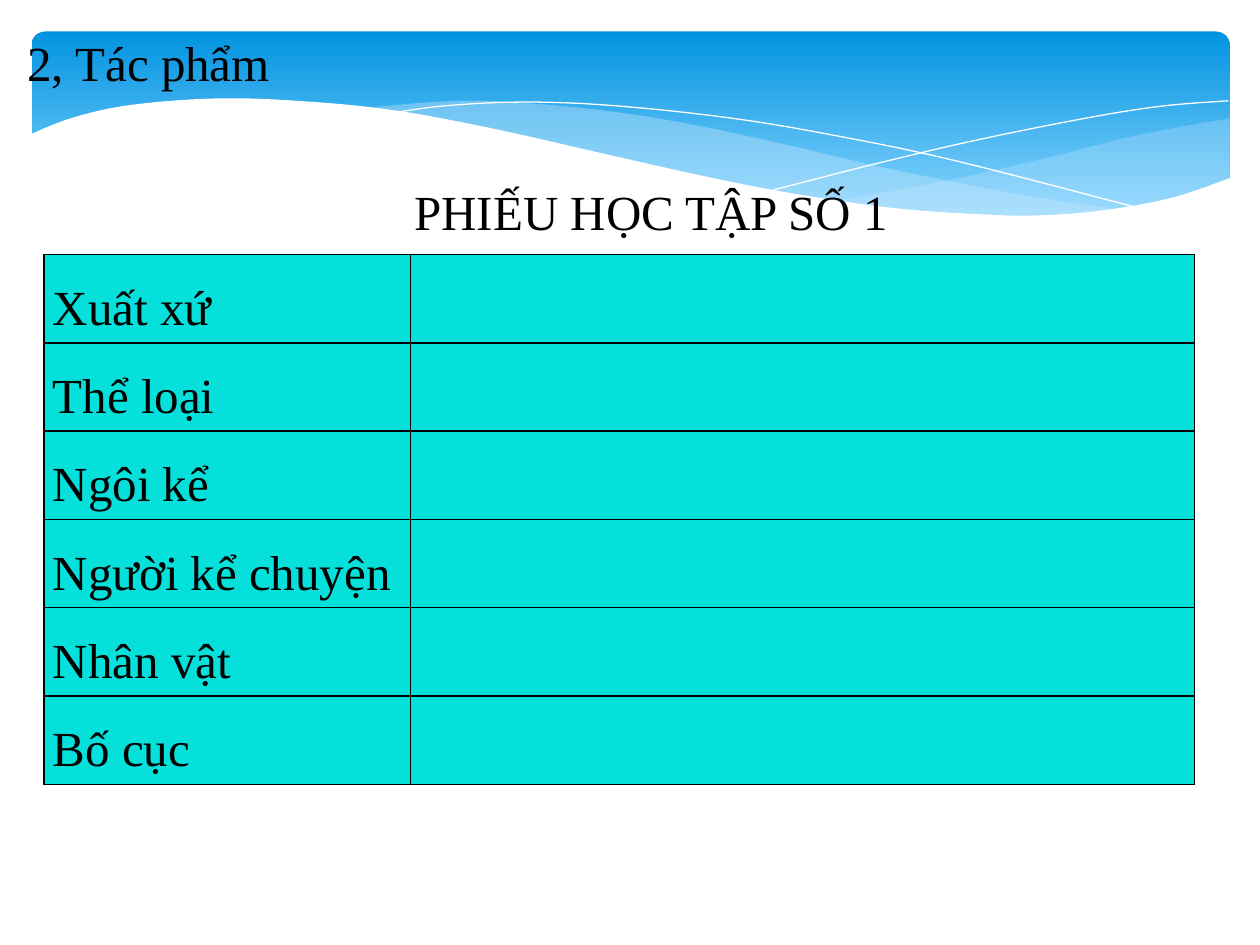
from lxml import etree
from pptx import Presentation
from pptx.dml.color import RGBColor
from pptx.enum.shapes import MSO_SHAPE
from pptx.enum.text import MSO_AUTO_SIZE, PP_ALIGN
from pptx.oxml.ns import qn
from pptx.util import Inches, Pt

COLORS = {
    "sky": "0293E0",
    "pale_sky": "83D3FE",
    "mist": "C6E7FC",
    "white": "FFFFFF",
    "cell": "05E0DB",
    "black": "000000",
}

# Wave edges as (x, y) knots in inches
RIGHT_TOP = [(9.76, 0.94), (9.35, 1.01), (8.91, 1.1), (8.32, 1.25),
             (7.53, 1.43), (6.61, 1.6)]
RIGHT_BOTTOM = [(6.61, 1.6), (7.19, 1.67), (7.69, 1.71), (8.14, 1.72),
                (8.72, 1.69), (9.28, 1.58), (9.76, 1.41)]
MIDDLE_TOP = [(8.93, 1.67), (8.07, 1.54), (7.06, 1.34), (6.29, 1.16),
              (5.55, 1), (4.89, 0.89), (4.2, 0.82), (3.61, 0.8), (2.86, 0.86)]
MIDDLE_BOTTOM = [(2.86, 0.86), (3.42, 0.94), (4.04, 1.06), (4.91, 1.26),
                 (5.84, 1.46), (6.65, 1.61), (7.36, 1.69), (8.07, 1.73),
                 (8.48, 1.72), (8.93, 1.67)]
FALLING_LINE = [(3.09, 0.9), (3.53, 0.84), (4.16, 0.81), (4.89, 0.84),
                (5.82, 0.94), (6.65, 1.08), (7.6, 1.28), (9.07, 1.66)]
RISING_LINE = [(6.13, 1.51), (6.95, 1.3), (7.76, 1.11), (8.66, 0.93),
               (9.24, 0.84), (9.75, 0.8)]
WHITE_TOP = [(0.23, 1.07), (0.59, 0.93), (1.06, 0.83), (1.77, 0.78),
             (2.5, 0.81), (3.16, 0.88), (3.91, 1.02), (4.75, 1.21),
             (5.55, 1.39), (6.26, 1.53), (7.08, 1.65), (7.78, 1.7),
             (8.23, 1.71), (8.75, 1.67), (9.3, 1.57), (9.77, 1.41)]


def smooth(knots, steps=6):
    """Return points on a Catmull-Rom curve through the knots."""
    padded = [knots[0], *knots, knots[-1]]
    points = [knots[0]]
    for a, b, c, d in zip(padded, padded[1:], padded[2:], padded[3:]):
        for i in range(1, steps + 1):
            t = i / steps
            points.append(tuple(
                (2 * q + (r - p) * t + (2 * p - 5 * q + 4 * r - s) * t ** 2
                 + (3 * q - p - 3 * r + s) * t ** 3) / 2
                for p, q, r, s in zip(a, b, c, d)))
    return points


class SlideBuilder:
    font = "Times New Roman"
    size = Pt(28)

    def __init__(self, slide):
        self.slide = slide

    def color(self, name):
        return RGBColor.from_string(COLORS[name])

    def style(self, p):
        for r in p.runs:
            r.font.name = self.font
            r.font.size = self.size
            r.font.color.rgb = self.color("black")

    def banner(self, x, y, w, h):
        sp = self.slide.shapes.add_shape(
            MSO_SHAPE.ROUNDED_RECTANGLE,
            Inches(x), Inches(y), Inches(w), Inches(h))
        sp.adjustments[0] = 0.07
        sp.shadow.inherit = False
        sp.line.fill.background()
        sp.fill.gradient()
        sp.fill.gradient_angle = 270
        stops = zip(sp.fill.gradient_stops, ("sky", "pale_sky"), (0, 0.9))
        for stop, name, position in stops:
            stop.color.rgb = self.color(name)
            stop.position = position

    def freeform(self, points, close):
        pts = [(Inches(x), Inches(y)) for x, y in points]
        builder = self.slide.shapes.build_freeform(*pts[0])
        builder.add_line_segments(pts[1:], close=close)
        sp = builder.convert_to_shape()
        sp.shadow.inherit = False
        return sp

    def wave(self, points, fill, opacity=100):
        sp = self.freeform(points, True)
        sp.line.fill.background()
        sp.fill.solid()
        sp.fill.fore_color.rgb = self.color(fill)
        if opacity < 100:
            clr = sp.fill._xPr.find(".//" + qn("a:srgbClr"))
            etree.SubElement(clr, qn("a:alpha"), val=str(opacity * 1000))

    def curve(self, points):
        sp = self.freeform(points, False)
        sp.fill.background()
        sp.line.color.rgb = self.color("white")
        sp.line.width = Pt(0)

    def text(self, text, x, y, w, h):
        box = self.slide.shapes.add_textbox(
            Inches(x), Inches(y), Inches(w), Inches(h))
        tf = box.text_frame
        tf.word_wrap = True
        tf.auto_size = MSO_AUTO_SIZE.SHAPE_TO_FIT_TEXT
        tf.text = text
        self.style(tf.paragraphs[0])

    def borders(self, cell):
        tc_pr = cell._tc.get_or_add_tcPr()
        for i, side in enumerate(("lnL", "lnR", "lnT", "lnB")):
            ln = etree.Element(qn(f"a:{side}"), w=str(Pt(1)))
            fill = etree.SubElement(ln, qn("a:solidFill"))
            etree.SubElement(fill, qn("a:srgbClr"), val=COLORS["black"])
            tc_pr.insert(i, ln)

    def table(self, labels, x, y, widths, row_height):
        table = self.slide.shapes.add_table(
            len(labels), len(widths), Inches(x), Inches(y),
            Inches(sum(widths)), Inches(row_height * len(labels))).table
        for column, width in zip(table.columns, widths):
            column.width = Inches(width)
        for row, label in enumerate(labels):
            table.cell(row, 0).text_frame.text = label
        for cell in table.iter_cells():
            cell.fill.solid()
            cell.fill.fore_color.rgb = self.color("cell")
            cell.margin_left = cell.margin_right = Inches(0.07)
            cell.margin_top = cell.margin_bottom = 0
            self.borders(cell)
            p = cell.text_frame.paragraphs[0]
            p.alignment = PP_ALIGN.JUSTIFY
            p.line_spacing = 1.5
            p.space_after = Pt(10)
            self.style(p)


def main():
    prs = Presentation()
    prs.slide_width, prs.slide_height = Inches(10), Inches(7.5)
    s = SlideBuilder(prs.slides.add_slide(prs.slide_layouts[6]))

    # Banner with waves
    s.banner(0.25, 0.25, 9.51, 1.56)
    s.wave(smooth(RIGHT_TOP) + smooth(RIGHT_BOTTOM), "mist", 29)
    s.wave(smooth(MIDDLE_TOP) + smooth(MIDDLE_BOTTOM), "mist", 40)
    s.curve(smooth(FALLING_LINE))
    s.curve(smooth(RISING_LINE))
    s.wave(smooth(WHITE_TOP) + [(9.77, 2.24), (0.23, 2.24)], "white")

    # Heading, worksheet table and its title
    s.text("2, Tác phẩm", 0.12, 0.21, 4.57, 0.57)
    s.table(["Xuất xứ", "Thể loại", "Ngôi kể", "Người kể chuyện",
             "Nhân vật", "Bố cục"], 0.35, 2.02, (2.91, 6.22), 0.7)
    s.text("PHIẾU HỌC TẬP SỐ 1", 3.19, 1.39, 4.41, 0.57)

    prs.save("out.pptx")


if __name__ == "__main__":
    main()
